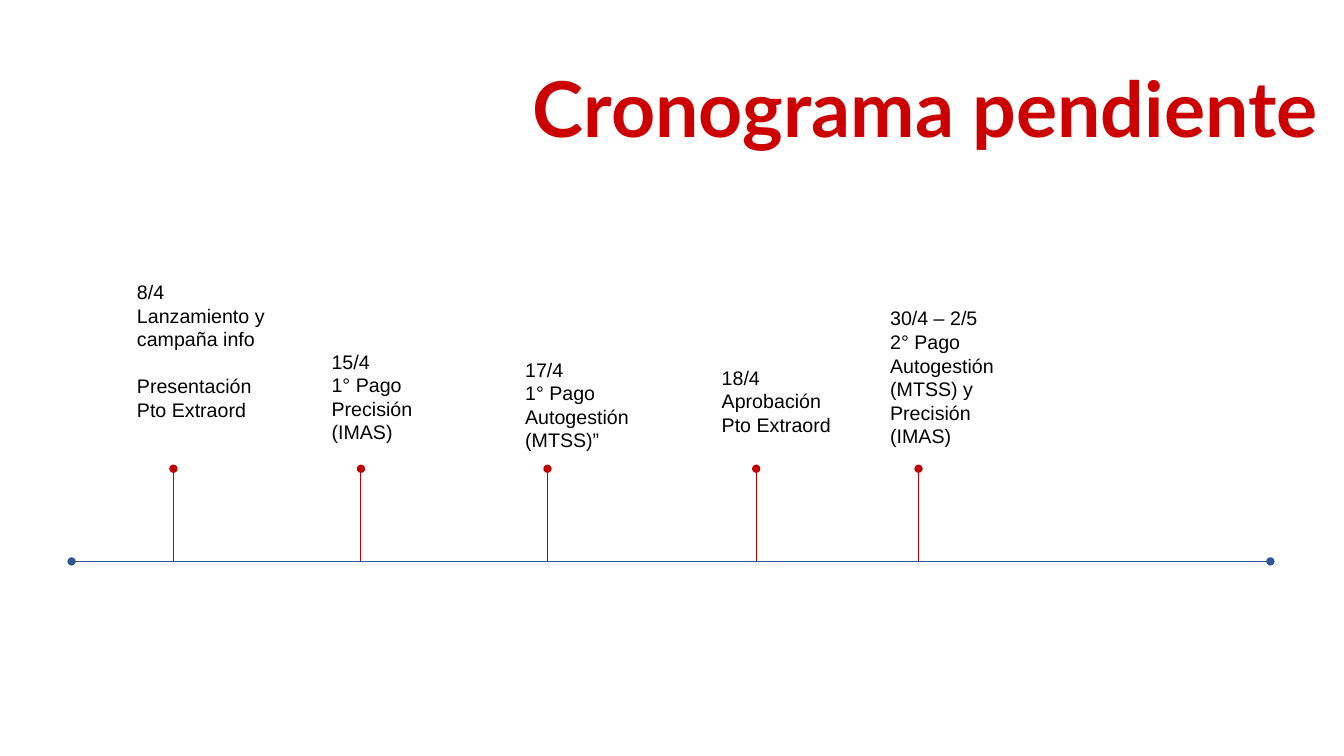
from pptx import Presentation
from pptx.dml.color import RGBColor
from pptx.enum import shapes, text
from pptx.oxml import ns
from pptx.util import Inches, Pt
from lxml import etree

COLORS = {"title": "CC0000", "axis": "2F5597", "marker": "C00000", "label": "000000"}
AXIS_Y, MARKER_TOP = 5.57, 4.65
LABEL_WIDTH = 1.55
LINE_HEIGHT = 16.8

# Marker x, label left, label top, label height, paragraphs (text, space before)
MILESTONES = [
    (1.72, 1.26, 2.73, 1.51, [("8/4", 0), ("Lanzamiento y campaña info", 0),
                              ("Presentación Pto Extraord", LINE_HEIGHT)]),
    (3.58, 3.19, 3.42, 1.04, [("15/4", 0), ("1° Pago Precisión (IMAS)", 0)]),
    (5.43, 5.11, 3.5, 1.04, [("17/4", 0), ("1° Pago Autogestión (MTSS)”", 0)]),
    (7.5, 7.06, 3.58, 0.81, [("18/4", 0), ("Aprobación", 0), ("Pto Extraord", 0)]),
    (9.11, 8.73, 2.99, 1.51, [("30/4 – 2/5", 0),
                              ("2° Pago Autogestión (MTSS) y Precisión (IMAS)", 0)]),
]


def add_span(para, words, font, size, color, bold=False):
    span = para.add_run()
    span.text = words
    span.font.name = font
    span.font.size = Pt(size)
    span.font.bold = bold
    span.font.color.rgb = RGBColor.from_string(COLORS[color])


def place(shape, left, top, width, height):
    shape.left, shape.top = Inches(left), Inches(top)
    shape.width, shape.height = Inches(width), Inches(height)


def add_title(page, words):
    title = page.shapes.title
    place(title, 0.29, 0.39, 12.88, 1.45)
    frame = title.text_frame
    frame.word_wrap = True
    frame.auto_size = text.MSO_AUTO_SIZE.NONE
    frame.vertical_anchor = text.MSO_ANCHOR.MIDDLE
    para = frame.paragraphs[0]
    para.alignment = text.PP_ALIGN.RIGHT
    para.line_spacing = 0.9
    add_span(para, words, "Lato", 55, "title", bold=True)


def add_dotted_line(page, start, end, color, ends):
    """Draw a straight line with round dots at the named ends."""
    line = page.shapes.add_connector(
        shapes.MSO_CONNECTOR.STRAIGHT, *map(Inches, start + end))
    line.line.color.rgb = RGBColor.from_string(COLORS[color])
    line.line.width = Pt(0.75)
    outline = line.line._get_or_add_ln()
    for end_name in ends:
        etree.SubElement(outline, ns.qn(f"a:{end_name}"), type="oval")
    etree.SubElement(line._element.spPr, ns.qn("a:effectLst"))


def add_label(page, left, top, height, entries):
    box = page.shapes.add_textbox(
        Inches(left), Inches(top), Inches(LABEL_WIDTH), Inches(height))
    frame = box.text_frame
    frame.word_wrap = True
    frame.auto_size = text.MSO_AUTO_SIZE.SHAPE_TO_FIT_TEXT
    for index, (words, gap) in enumerate(entries):
        para = frame.add_paragraph() if index else frame.paragraphs[0]
        para.space_before = Pt(gap)
        add_span(para, words, "Arial", 14, "label")


def main():
    deck = Presentation()
    deck.slide_width, deck.slide_height = Inches(13.33), Inches(7.5)
    page = deck.slides.add_slide(deck.slide_layouts.get_by_name("Title Only"))

    # Heading
    add_title(page, "Cronograma pendiente")

    # Time axis
    add_dotted_line(page, (0.71, AXIS_Y), (12.6, AXIS_Y), "axis", ["headEnd", "tailEnd"])

    # Milestones
    for x, left, top, height, entries in MILESTONES:
        add_dotted_line(page, (x, AXIS_Y), (x, MARKER_TOP), "marker", ["tailEnd"])
        add_label(page, left, top, height, entries)

    deck.save("out.pptx")


if __name__ == "__main__":
    main()
